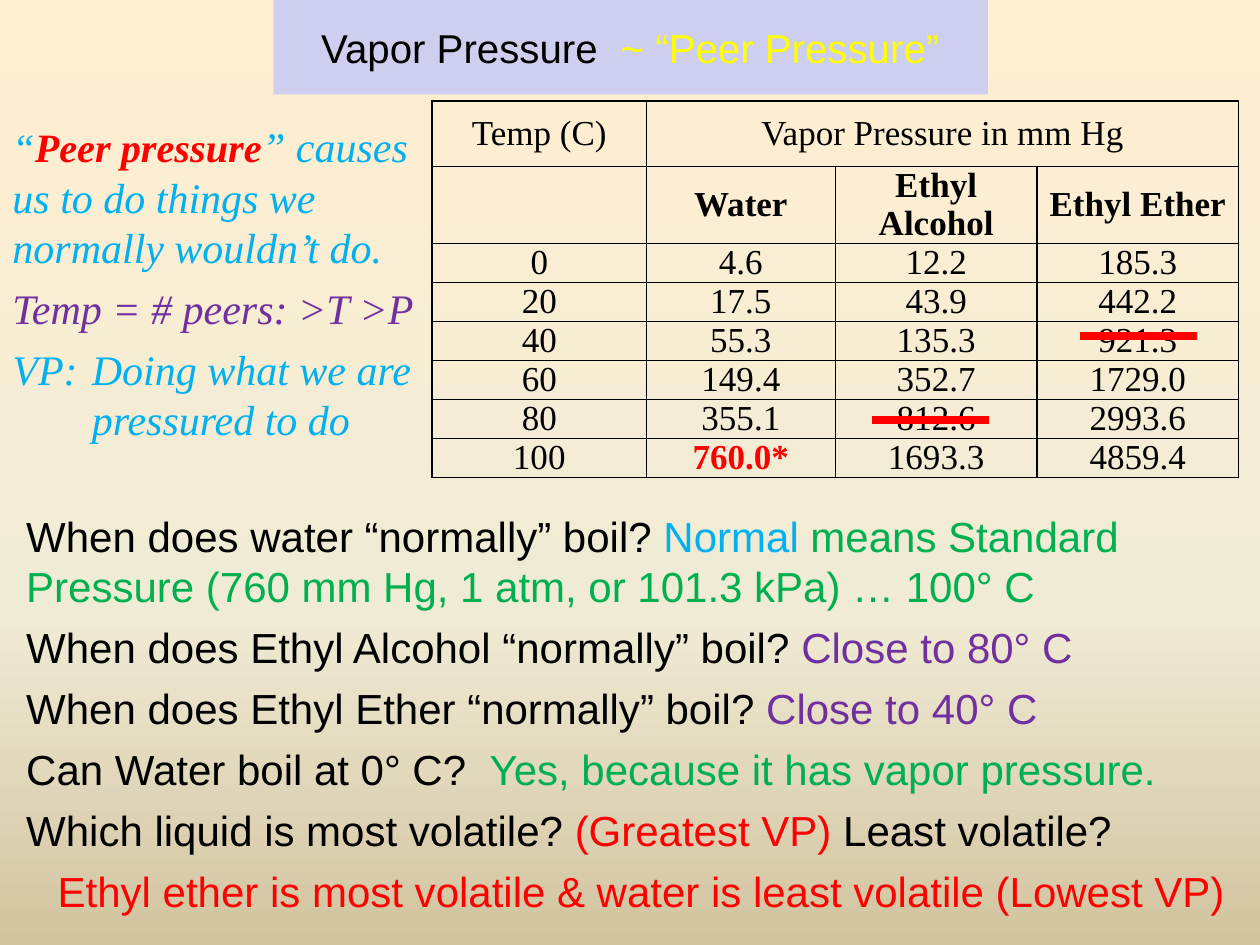
from copy import deepcopy

from pptx import Presentation
from pptx import util as u
from pptx.dml.color import RGBColor
from pptx.enum import shapes, text
from pptx.oxml import parse_xml
from pptx.oxml.ns import nsdecls, qn

BLACK = RGBColor(0x00, 0x00, 0x00)
RED = RGBColor(0xFF, 0x00, 0x00)
BLUE = RGBColor(0x00, 0xB0, 0xF0)
GREEN = RGBColor(0x00, 0xB0, 0x50)
PURPLE = RGBColor(0x70, 0x30, 0xA0)
YELLOW = RGBColor(0xFF, 0xFF, 0x00)
LILAC = RGBColor(0xCE, 0xCE, 0xEF)
CREAM = RGBColor(0xFF, 0xEF, 0xD1)
SAND = RGBColor(0xF0, 0xEB, 0xD5)
TAN = RGBColor(0xD1, 0xC3, 0x9F)

SANS, SERIF = "Arial", "Times New Roman"
MID = text.MSO_ANCHOR.MIDDLE
CENTER = text.PP_ALIGN.CENTER

COLS = [1.7, 1.5, 1.6, 1.6]
ROWS = [0.52, 0.61] + [0.31] * 6
DATA = [
    ["Temp (C)", "Vapor Pressure in mm Hg", "", ""],
    ["", "Water", "Ethyl Alcohol", "Ethyl Ether"],
    ["0", "4.6", "12.2", "185.3"],
    ["20", "17.5", "43.9", "442.2"],
    ["40", "55.3", "135.3", "921.3"],
    ["60", "149.4", "352.7", "1729.0"],
    ["80", "355.1", "812.6", "2993.6"],
    ["100", "760.0*", "1693.3", "4859.4"],
]
NOTES = [
    [("“", BLUE), ("Peer pressure", RED),
     ("” causes us to do things we normally wouldn’t do.", BLUE)],
    [("Temp = # peers: >T >P", PURPLE)],
    [("VP:\tDoing what we are pressured to do", BLUE)],
]
QUIZ = [
    [("When does water “normally” boil? ", BLACK), ("Normal", BLUE),
     (" means Standard Pressure (760 mm Hg, 1 atm, or 101.3 kPa) … 100° C", GREEN)],
    [("When does Ethyl Alcohol “normally” boil? ", BLACK), ("Close to 80° C", PURPLE)],
    [("When does Ethyl Ether “normally” boil? ", BLACK), ("Close to 40° C", PURPLE)],
    [("Can Water boil at 0° C?  ", BLACK), ("Yes, because it has vapor pressure.", GREEN)],
    [("Which liquid is most volatile? ", BLACK), ("(Greatest VP) ", RED),
     ("Least volatile?", BLACK)],
    [("Ethyl ether is most volatile & water is least volatile (Lowest VP)", RED)],
]


def inches(box):
    return [u.Inches(n) for n in box]


def write(frame, paras, face, size):
    """Fill a text frame with paragraphs made of (words, colour) runs."""
    frame.word_wrap = True
    for i, runs in enumerate(paras):
        para = frame.add_paragraph() if i else frame.paragraphs[0]
        if i:
            para.space_before = u.Pt(6)
        for words, color in runs:
            run = para.add_run()
            run.text = words
            run.font.name, run.font.size = face, u.Pt(size)
            run.font.color.rgb = color


def indent(para, left, first):
    props = para._p.get_or_add_pPr()
    props.set("marL", str(u.Inches(left)))
    props.set("indent", str(u.Inches(first)))


def paint(slide):
    """Give the slide its three-stop background, top to bottom."""
    fill = slide.background.fill
    fill.gradient()
    fill.gradient_angle = 270
    stops = slide._element.find(".//" + qn("a:gsLst"))
    stops.append(deepcopy(stops[-1]))
    for stop, color, place in zip(fill.gradient_stops, (CREAM, SAND, TAN), (0, 0.65, 1)):
        stop.color.rgb, stop.position = color, place


def add_title(slide, box):
    bar = slide.shapes.add_shape(shapes.MSO_SHAPE.RECTANGLE, *inches(box))
    bar.shadow.inherit = False
    bar.fill.solid()
    bar.fill.fore_color.rgb = LILAC
    bar.line.fill.background()
    frame = bar.text_frame
    frame.vertical_anchor = MID
    write(frame, [[("Vapor Pressure  ", BLACK), ("~ “Peer Pressure”", YELLOW)]], SANS, 23)
    frame.paragraphs[0].alignment = CENTER


def add_notes(slide, box):
    frame = slide.shapes.add_textbox(*inches(box)).text_frame
    write(frame, NOTES, SERIF, 24)
    first, last = frame.paragraphs[0], frame.paragraphs[-1]
    for run in (run for para in frame.paragraphs for run in para.runs):
        run.font.italic = True
    for run in first.runs[:2]:
        run.font.size = u.Pt(23)
    first.runs[1].font.bold = True
    indent(last, 0.63, -0.63)


def add_quiz(slide, box):
    frame = slide.shapes.add_textbox(*inches(box)).text_frame
    write(frame, QUIZ, SANS, 24)
    indent(frame.paragraphs[-1], 0.25, 0)


def border(cell):
    props = cell._tc.get_or_add_tcPr()
    for side in "LRTB":
        props.append(parse_xml(
            f'<a:ln{side} {nsdecls("a")} w="12700"><a:solidFill>'
            f'<a:srgbClr val="{BLACK}"/></a:solidFill></a:ln{side}>'))


def add_grid(slide, box):
    grid = slide.shapes.add_table(len(ROWS), len(COLS), *inches(box)).table
    grid.first_row = grid.horz_banding = False
    for col, width in zip(grid.columns, COLS):
        col.width = u.Inches(width)
    for row, height in zip(grid.rows, ROWS):
        row.height = u.Inches(height)
    grid.cell(0, 1).merge(grid.cell(0, 3))
    for r, line in enumerate(DATA):
        for c, words in enumerate(line):
            cell = grid.cell(r, c)
            border(cell)
            cell.fill.background()
            cell.vertical_anchor = MID
            cell.margin_left = cell.margin_right = u.Inches(0.07)
            cell.margin_top = cell.margin_bottom = 0
            if not words:
                continue
            star = words.endswith("*")
            write(cell.text_frame, [[(words, RED if star else BLACK)]], SERIF, 20)
            para = cell.text_frame.paragraphs[0]
            para.alignment = CENTER
            para.line_spacing = u.Pt(22)
            para.runs[0].font.bold = r == 1 or star


def strike(slide, left, top, width):
    line = slide.shapes.add_connector(
        shapes.MSO_CONNECTOR.STRAIGHT, *inches((left, top, left + width, top)))
    line.line.color.rgb = RED
    line.line.width = u.Pt(4.5)
    line._element.spPr.append(parse_xml(f'<a:effectLst {nsdecls("a")}/>'))


def main():
    deck = Presentation()
    deck.slide_width, deck.slide_height = inches((10, 7.5))
    slide = deck.slides.add_slide(deck.slide_layouts[6])
    paint(slide)
    add_quiz(slide, (0.11, 4, 9.75, 3.47))
    add_title(slide, (2.17, 0, 5.67, 0.75))
    add_grid(slide, (3.43, 0.8, sum(COLS), sum(ROWS)))
    add_notes(slide, (0, 0.91, 3.42, 2.69))
    for left, top in ((6.92, 3.33), (8.57, 2.67)):
        strike(slide, left, top, 0.93)
    deck.save("out.pptx")


if __name__ == "__main__":
    main()
